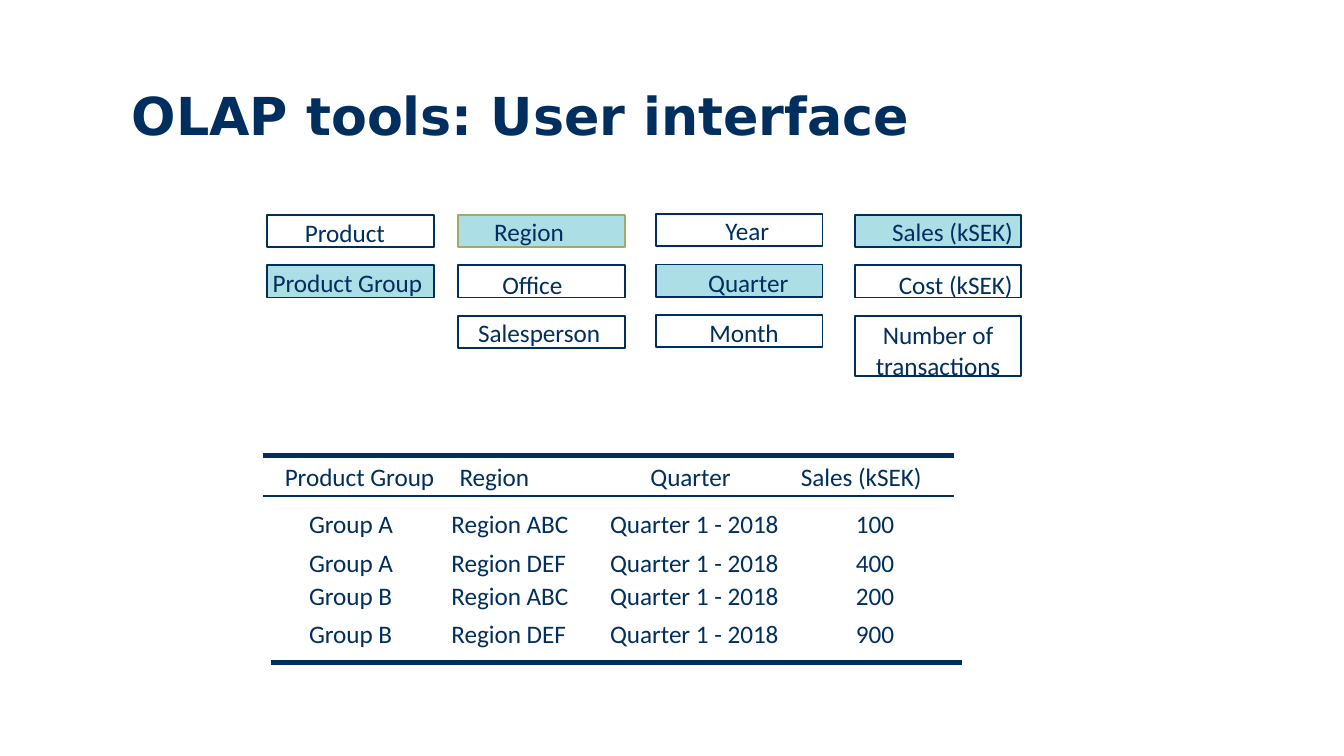
"""Build the slide on the user interface of OLAP tools."""
import pptx
import pptx.dml.color
import pptx.enum.shapes
import pptx.enum.text
import pptx.oxml.ns
import pptx.util

Pt = pptx.util.Pt
ALIGN = pptx.enum.text.PP_ALIGN
NAVY, RULE, AQUA, OLIVE, WHITE = "002F5F", "002E5D", "ACDEE6", "A3A86B", "FFFFFF"

TITLE = "OLAP tools: User interface"
FIELD_COLUMNS = [
    {"left": 143.3, "top": 115.2, "selected": "Product Group",
     "fields": [("Product", 13, -2.2), ("Product Group", -4.3, -2.7)]},
    {"left": 245.5, "top": 115.2, "selected": "Region",
     "fields": [("Region", 12.2, -2.9), ("Office", 16.6, -1.7), ("Salesperson", 3.6, -2.9)]},
    {"left": 351.4, "top": 114.7, "selected": "Quarter",
     "fields": [("Year", 30.2, -2.9), ("Quarter", 20.9, -2.2), ("Month", 21.6, -2)]},
    {"left": 457.9, "top": 115.2, "selected": "Sales (kSEK)",
     "fields": [("Sales (kSEK)", 13, -2.9), ("Cost (kSEK)", 16.6, -1.7),
                ("Number of transactions", -4.3, -1.4)]},
]
FIELD_WIDTH, FIELD_HEIGHT, TALL_HEIGHT, FIELD_PITCH = 89.3, 17.3, 32.4, 27

RESULTS = [
    ("Product Group", "Region", "Quarter", "Sales (kSEK)"),
    ("Group A", "Region ABC", "Quarter 1 - 2018", "100"),
    ("Group A", "Region DEF", "Quarter 1 - 2018", "400"),
    ("Group B", "Region ABC", "Quarter 1 - 2018", "200"),
    ("Group B", "Region DEF", "Quarter 1 - 2018", "900"),
]
TABLE_TOP = 246.7
COLUMN_EDGES = [141, 238, 320, 424, 511]
ROW_HEIGHTS = [25.2, 20.9, 18, 20.2, 20]
HEADER_LEFTS = [152.6, 246.2, 348.5, 429.1]
BODY_LEFTS = [165.6, 241.9, 326.9, 458.6]
RULES = [(141.1, 244.1, 3), (145.4, 355, 3), (141.1, 265.7, 1.5)]
RULE_LENGTH = 370.1


def rgb(value):
    return pptx.dml.color.RGBColor.from_string(value)


def write(p, text, size=13.5, name="Calibri", bold=False):
    r = p.add_run()
    r.text = text
    r.font.size, r.font.name, r.font.bold = Pt(size), name, bold
    r.font.color.rgb = rgb(NAVY)


def add_title(s):
    sp = s.shapes.title
    sp.left, sp.top, sp.width, sp.height = Pt(63.4), Pt(39.6), Pt(469.4), Pt(46.8)
    tf = sp.text_frame
    tf.auto_size = pptx.enum.text.MSO_AUTO_SIZE.NONE
    tf.vertical_anchor = pptx.enum.text.MSO_ANCHOR.TOP
    tf.margin_top = Pt(5)
    tf.paragraphs[0].alignment = ALIGN.LEFT
    write(tf.paragraphs[0], TITLE, 28, "DejaVu Sans", True)


def add_field(s, text, left, top, dx, dy, selected):
    tall = text.startswith("Number")
    sp = s.shapes.add_shape(pptx.enum.shapes.MSO_SHAPE.RECTANGLE, Pt(left), Pt(top),
                            Pt(FIELD_WIDTH), Pt(TALL_HEIGHT if tall else FIELD_HEIGHT))
    sp.shadow.inherit = False
    sp.fill.solid()
    sp.fill.fore_color.rgb = rgb(AQUA if selected else WHITE)
    sp.line.color.rgb = rgb(OLIVE if text == "Region" else NAVY)
    sp.line.width = Pt(1)
    label = s.shapes.add_textbox(Pt(left + dx), Pt(top + dy), Pt(97.9), Pt(40.3 if tall else 23.8))
    tf = label.text_frame
    tf.word_wrap = True
    tf.paragraphs[0].alignment = ALIGN.CENTER if tall else ALIGN.LEFT
    write(tf.paragraphs[0], text)


def add_results(s):
    left, right = COLUMN_EDGES[0], COLUMN_EDGES[-1]
    table = s.shapes.add_table(len(RESULTS), len(RESULTS[0]), Pt(left), Pt(TABLE_TOP),
                               Pt(right - left), Pt(sum(ROW_HEIGHTS))).table
    table.first_row = table.horz_banding = False
    for column, start, end in zip(table.columns, COLUMN_EDGES, COLUMN_EDGES[1:]):
        column.width = Pt(end - start)
    for i, (row, height) in enumerate(zip(table.rows, ROW_HEIGHTS)):
        row.height = Pt(height)
        text_lefts = BODY_LEFTS if i else HEADER_LEFTS
        for cell, text, x, edge in zip(row.cells, RESULTS[i], text_lefts, COLUMN_EDGES):
            cell.fill.background()
            cell.margin_left, cell.margin_top = Pt(x - edge), Pt(1)
            cell.margin_right = cell.margin_bottom = 0
            write(cell.text_frame.paragraphs[0], text)


def add_rule(s, left, y, weight):
    line = s.shapes.add_connector(pptx.enum.shapes.MSO_CONNECTOR.STRAIGHT,
                                  Pt(left), Pt(y), Pt(left + RULE_LENGTH), Pt(y))
    line.line.color.rgb = rgb(RULE)
    line.line.width = Pt(weight)
    sp_pr = line._element.spPr
    sp_pr.append(sp_pr.makeelement(pptx.oxml.ns.qn("a:effectLst"), {}))


def main():
    prs = pptx.Presentation()
    prs.slide_width, prs.slide_height = Pt(720), Pt(405)
    s = prs.slides.add_slide(prs.slide_layouts[5])
    add_title(s)
    for column in FIELD_COLUMNS:
        for i, (text, dx, dy) in enumerate(column["fields"]):
            add_field(s, text, column["left"], column["top"] + i * FIELD_PITCH,
                      dx, dy, text == column["selected"])
    add_results(s)
    for rule in RULES:
        add_rule(s, *rule)
    prs.save("out.pptx")


if __name__ == "__main__":
    main()
